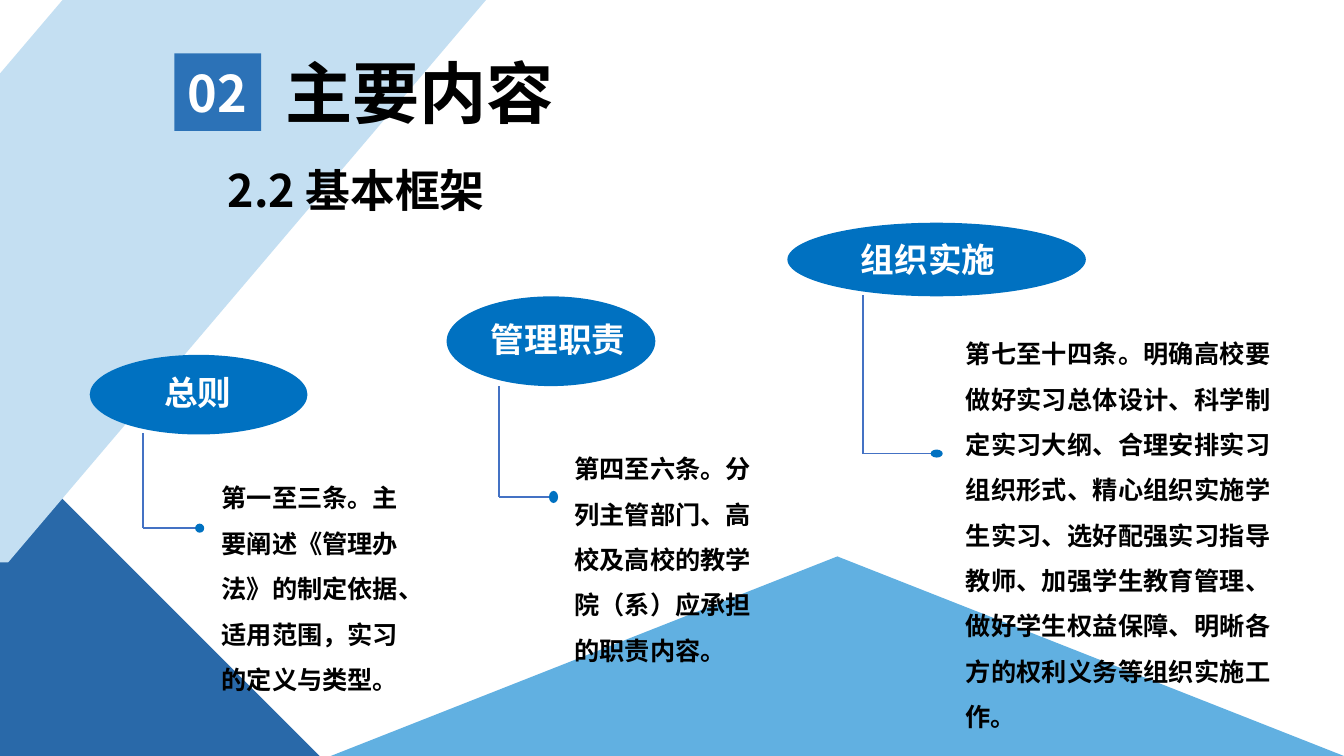
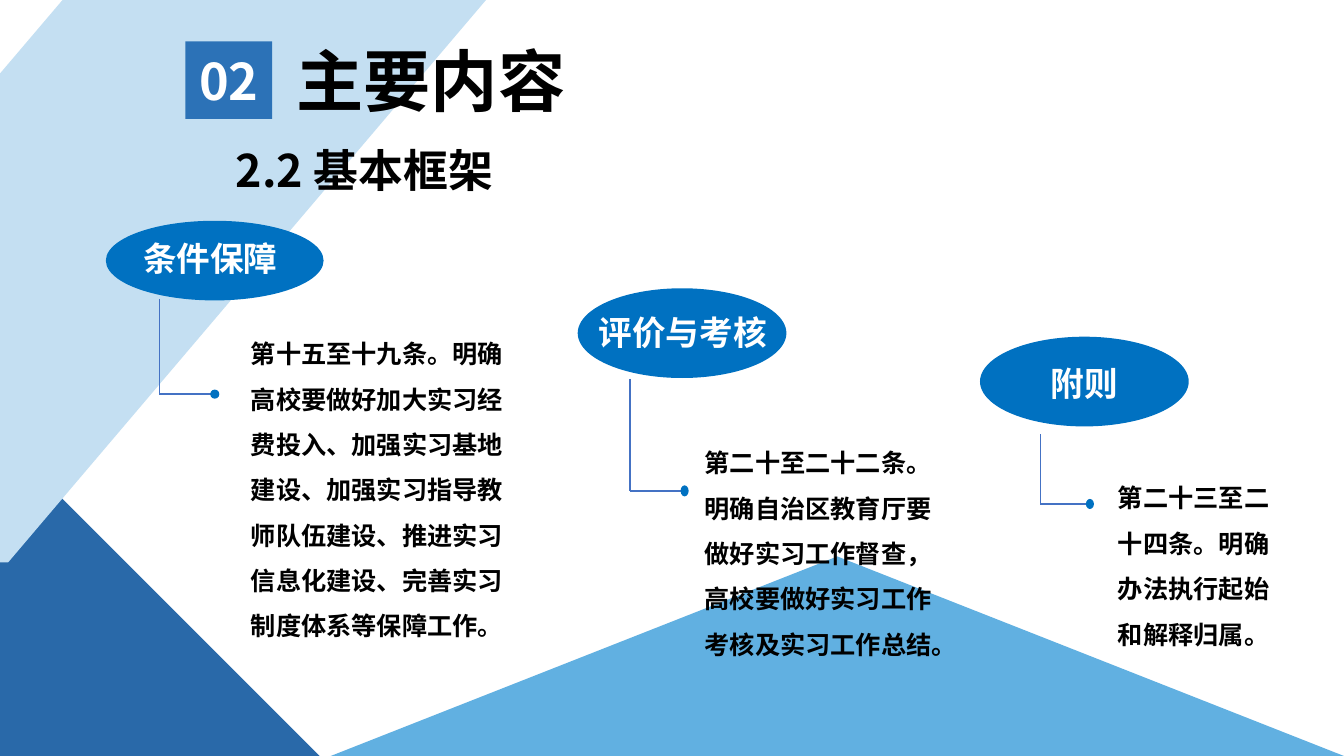
from collections import namedtuple
from dataclasses import dataclass

from lxml.etree import SubElement
from pptx import Presentation
from pptx.dml.color import RGBColor
from pptx.enum.shapes import MSO_CONNECTOR as Connector, MSO_SHAPE as Shape
from pptx.enum.text import MSO_ANCHOR as Anchor, MSO_AUTO_SIZE as AutoSize, PP_ALIGN as Align
from pptx.oxml.ns import qn
from pptx.util import Inches, Pt


@dataclass(frozen=True)
class Theme:
    font: str = "Noto Sans CJK SC"
    ink: str = "000000"
    white: str = "FFFFFF"
    pale: str = "C4DFF2"
    deep: str = "2969A9"
    sky: str = "61B0E1"
    badge: str = "2C72B7"
    bubble: str = "0071C1"
    line: str = "4472C4"
    title_size: int = 48
    badge_size: int = 36
    subtitle_size: int = 32
    label_size: int = 24
    body_size: int = 18


theme = Theme()
Branch = namedtuple("Branch", "bubble label_at label stem dot dot_size body_at body align")
Section = namedtuple("Section", "badge_at subtitle_at branches")


def paint(shape, color):
    shape.shadow.inherit = False
    shape.fill.solid()
    shape.fill.fore_color.rgb = RGBColor.from_string(color)
    shape.line.fill.background()


def write(box, text, size, color=theme.ink, align=Align.LEFT, anchor=Anchor.TOP, spacing=1.0):
    frame = box.text_frame
    frame.text = text
    frame.word_wrap = True
    frame.auto_size = AutoSize.NONE
    frame.vertical_anchor = anchor
    para = frame.paragraphs[0]
    para.alignment = align
    para.line_spacing = spacing
    for span in para.runs:
        span.font.name = theme.font
        span.font.size = Pt(size)
        span.font.bold = True
        span.font.color.rgb = RGBColor.from_string(color)
        SubElement(span.font._element, qn("a:ea"), typeface=theme.font)


sections = [
    Section((1.73, 0.53), (2.05, 1.57), [
        Branch((0.89, 3.52, 2.16, 0.79), (1.53, 3.64, 1.13, 0.5), "总则",
               (1.42, 4.3), (1.98, 5.24), (0.09, 0.09), (2.1, 4.59, 2.06, 2.37),
               "第一至三条。主要阐述《管理办法》的制定依据、适用范围，实习的定义与类型。", Align.LEFT),
        Branch((4.43, 2.94, 2.07, 0.89), (4.77, 3.11, 2.01, 0.5), "管理职责",
               (4.95, 3.83), (5.49, 4.93), (0.09, 0.12), (5.6, 4.3, 1.98, 2.37),
               "第四至六条。分列主管部门、高校及高校的教学院（系）应承担的职责内容。", Align.LEFT),
        Branch((7.81, 2.21, 2.96, 0.73), (8.44, 2.32, 1.72, 0.5), "组织实施",
               (8.56, 2.93), (9.29, 4.5), (0.12, 0.08), (9.48, 3.16, 3.22, 4.19),
               "第七至十四条。明确高校要做好实习总体设计、科学制定实习大纲、合理安排实习组织形式、"
               "精心组织实施学生实习、选好配强实习指导教师、加强学生教育管理、做好学生权益保障、"
               "明晰各方的权利义务等组织实施工作。", Align.JUSTIFY),
    ]),
    Section((1.84, 0.41), (2.13, 1.37), [
        Branch((1.05, 2.19, 2.16, 0.79), (1.32, 2.31, 1.61, 0.5), "条件保障",
               (1.58, 2.97), (2.13, 3.91), (0.09, 0.09), (2.39, 3.16, 2.9, 3.28),
               "第十五至十九条。明确高校要做好加大实习经费投入、加强实习基地建设、"
               "加强实习指导教师队伍建设、推进实习信息化建设、完善实习制度体系等保障工作。", Align.LEFT),
        Branch((5.73, 2.86, 2.07, 0.89), (5.84, 3.05, 1.91, 0.5), "评价与考核",
               (6.25, 3.76), (6.79, 4.87), (0.08, 0.11), (6.89, 4.24, 2.63, 2.37),
               "第二十至二十二条。明确自治区教育厅要做好实习工作督查，"
               "高校要做好实习工作考核及实习工作总结。", Align.LEFT),
        Branch((9.72, 3.34, 2.07, 0.89), (10.32, 3.55, 1.28, 0.5), "附则",
               (10.32, 4.31), (10.81, 5), (0.08, 0.1), (10.99, 4.59, 1.8, 1.92),
               "第二十三至二十四条。明确办法执行起始和解释归属。", Align.LEFT),
    ]),
]
band_outline = [(4.82, 0), (0.08, 5.58), (0, 5.58), (0, 0.8), (-0.06, 0.8)]

deck = Presentation()
deck.slide_width, deck.slide_height = Inches(13.33), Inches(7.5)

for section in sections:
    page = deck.slides.add_slide(deck.slide_layouts[5])
    shapes = page.shapes

    corner = shapes.add_shape(Shape.RIGHT_TRIANGLE, Inches(0), Inches(4.33), Inches(3.17), Inches(3.17))
    paint(corner, theme.deep)
    outline = shapes.build_freeform(Inches(0.62), Inches(0))
    outline.add_line_segments([(Inches(x), Inches(y)) for x, y in band_outline])
    paint(outline.convert_to_shape(), theme.pale)
    hill = shapes.add_shape(Shape.ISOSCELES_TRIANGLE, Inches(3.28), Inches(5.52), Inches(10.05), Inches(1.98))
    paint(hill, theme.sky)

    left, top = section.badge_at
    badge = shapes.add_shape(Shape.RECTANGLE, Inches(left), Inches(top), Inches(0.86), Inches(0.77))
    paint(badge, theme.badge)
    write(badge, "02", theme.badge_size, theme.white, Align.CENTER, Anchor.MIDDLE)

    title = shapes.title
    title.left, title.top = Inches(left + 1), Inches(top - 0.07)
    title.width, title.height = Inches(3.07), Inches(0.91)
    write(title, "主要内容", theme.title_size)
    title.element.getparent().append(title.element)

    left, top = section.subtitle_at
    subtitle = shapes.add_textbox(Inches(left), Inches(top), Inches(4.44), Inches(0.64))
    subtitle.text_frame.margin_left = Inches(0.21)
    write(subtitle, "2.2 基本框架", theme.subtitle_size)

    for branch in section.branches:
        bubble = shapes.add_shape(Shape.OVAL, *map(Inches, branch.bubble))
        paint(bubble, theme.bubble)
        label = shapes.add_textbox(*map(Inches, branch.label_at))
        write(label, branch.label, theme.label_size, theme.white)

        elbow = (branch.stem[0], branch.dot[1])
        for start, end in ((branch.stem, elbow), (elbow, branch.dot)):
            line = shapes.add_connector(Connector.STRAIGHT, *map(Inches, start + end))
            line.line.color.rgb = RGBColor.from_string(theme.line)
            line.line.width = Pt(1)
            SubElement(line.element.spPr, qn("a:effectLst"))

        (x, y), (width, height) = branch.dot, branch.dot_size
        dot = shapes.add_shape(Shape.OVAL, Inches(x - width / 2), Inches(y - height / 2),
                               Inches(width), Inches(height))
        paint(dot, theme.bubble)

        body = shapes.add_textbox(*map(Inches, branch.body_at))
        write(body, branch.body, theme.body_size, align=branch.align, spacing=1.5)

deck.save("out.pptx")
